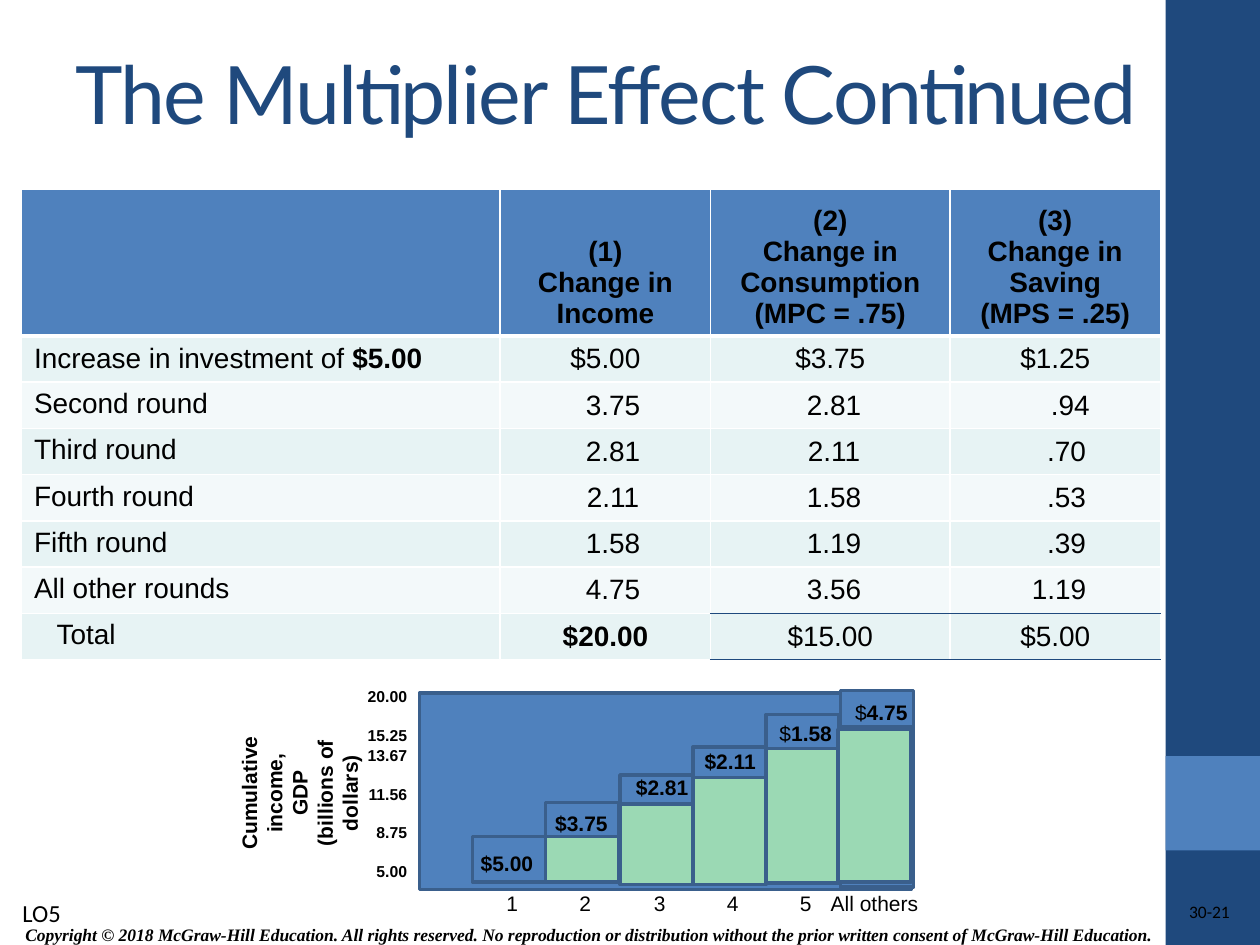
from dataclasses import dataclass
from typing import NamedTuple, Optional

from lxml.etree import SubElement
from pptx import Presentation
from pptx.dml.color import RGBColor
from pptx.enum.shapes import MSO_SHAPE
from pptx.enum.text import MSO_ANCHOR as Anchor, PP_ALIGN as Align
from pptx.oxml.ns import qn
from pptx.util import Pt

EMU_PER_PX = 9144
NAVY, BLUE, GREEN, OUTLINE = "1F497D", "4F81BD", "9BD9B4", "3A5F8C"
WHITE, BLACK = "FFFFFF", "000000"
BANDS = ("E7F3F4", "F3F9FA")
SPACE_PX = 6


class Box(NamedTuple):
    left: int
    top: int
    width: int
    height: int


class Run(NamedTuple):
    text: str
    bold: bool = False


class Row(NamedTuple):
    label: tuple
    values: tuple
    shifts: tuple = (0, 0, 0)
    indent: int = 0


@dataclass
class Style:
    size: float = 12
    font: str = "Arial"
    color: str = BLACK
    italic: bool = False
    align: Align = Align.CENTER
    anchor: Anchor = Anchor.TOP
    wrap: bool = False
    inset: Optional[int] = None
    rotation: int = 0
    tracking: int = 0


def emu(px: int) -> int:
    return px * EMU_PER_PX


def rgb(color: str) -> RGBColor:
    return RGBColor.from_string(color)


def fill_paragraph(paragraph, runs, style: Style) -> None:
    paragraph.alignment = style.align
    for item in runs:
        run = paragraph.add_run()
        run.text = item.text
        run.font.size = Pt(style.size)
        run.font.name = style.font
        run.font.bold = item.bold
        run.font.italic = style.italic
        run.font.color.rgb = rgb(style.color)
        if style.tracking:
            run.font._element.set("spc", str(style.tracking))


def fill_frame(frame, paragraphs, style: Style, gaps=()) -> None:
    for index, runs in enumerate(paragraphs):
        paragraph = frame.paragraphs[0] if index == 0 else frame.add_paragraph()
        if gaps and gaps[index]:
            paragraph.space_before = Pt(gaps[index])
        fill_paragraph(paragraph, runs, style)


def add_text(slide, box: Box, paragraphs, style: Style, gaps=()) -> None:
    shape = slide.shapes.add_textbox(*map(emu, box))
    shape.rotation = style.rotation
    frame = shape.text_frame
    frame.word_wrap = style.wrap
    frame.vertical_anchor = style.anchor
    if style.inset is not None:
        frame.margin_left = frame.margin_right = emu(style.inset)
        frame.margin_top = frame.margin_bottom = emu(style.inset)
    fill_frame(frame, paragraphs, style, gaps)


def add_rectangle(slide, box: Box, fill: str, line: Optional[str] = OUTLINE) -> None:
    shape = slide.shapes.add_shape(MSO_SHAPE.RECTANGLE, *map(emu, box))
    shape.shadow.inherit = False
    shape.fill.solid()
    shape.fill.fore_color.rgb = rgb(fill)
    if line:
        shape.line.color.rgb = rgb(line)
        shape.line.width = Pt(2)
    else:
        shape.line.fill.background()


def set_borders(cell, **special) -> None:
    properties = cell._tc.get_or_add_tcPr()
    for side in "LRTB":
        color, width = special.get(side, (WHITE, 1))
        line = SubElement(properties, qn(f"a:ln{side}"), w=str(Pt(width)))
        SubElement(SubElement(line, qn("a:solidFill")), qn("a:srgbClr"), val=color)


def style_cell(cell, fill: str, anchor: Anchor, **borders) -> None:
    set_borders(cell, **borders)
    cell.fill.solid()
    cell.fill.fore_color.rgb = rgb(fill)
    cell.vertical_anchor = anchor


HEADERS = (
    (),
    ("(1)", "Change in Income"),
    ("(2)", "Change in Consumption (MPC = .75)"),
    ("(3)", "Change in Saving", "(MPS = .25)"),
)
ROWS = (
    Row((Run("Increase in investment of "), Run("$5.00", True)), ("$5.00", "$3.75", "$1.25")),
    Row((Run("Second round"),), ("3.75", "2.81", ".94"), (2, 1, 4)),
    Row((Run("Third round"),), ("2.81", "2.11", ".70"), (2, 1, 3)),
    Row((Run("Fourth round"),), ("2.11", "1.58", ".53"), (2, 1, 3)),
    Row((Run("Fifth round"),), ("1.58", "1.19", ".39"), (2, 1, 3)),
    Row((Run("All other rounds"),), ("4.75", "3.56", "1.19"), (2, 1, 1)),
    Row((Run("Total"),), ("$20.00", "$15.00", "$5.00"), indent=3),
)


def add_rounds_table(slide) -> None:
    box = Box(17, 150, 904, 370)
    header_height = 116
    table = slide.shapes.add_table(len(ROWS) + 1, 4, *map(emu, box)).table
    for column, width in zip(table.columns, (380, 167, 190, 167)):
        column.width = emu(width)
    for index, row in enumerate(table.rows):
        row.height = emu(box.height - header_height) // len(ROWS) if index else emu(header_height)
    centered, left = Style(16), Style(16, align=Align.LEFT)
    thick, rule = (WHITE, 3), (NAVY, 1)
    for column, lines in enumerate(HEADERS):
        cell = table.cell(0, column)
        style_cell(cell, BLUE, Anchor.BOTTOM, B=thick)
        fill_frame(cell.text_frame, [[Run(line, True)] for line in lines], centered)
    last = len(ROWS) - 1
    for index, row in enumerate(ROWS):
        contents = (row.label, *((Run(value, value == "$20.00"),) for value in row.values))
        for column, (runs, shift) in enumerate(zip(contents, (row.indent, *row.shifts))):
            cell = table.cell(index + 1, column)
            borders = {"T": thick} if index == 0 else {}
            if column >= 2 and index >= last - 1:
                borders["B"] = rule
                if index == last:
                    borders["T"] = rule
            anchor = Anchor.MIDDLE if column or index == 0 else Anchor.TOP
            style_cell(cell, BANDS[index % 2], anchor, **borders)
            cell.margin_left = emu(10 + SPACE_PX * shift)
            fill_paragraph(cell.text_frame.paragraphs[0], runs, centered if column else left)


def add_income_steps(slide) -> None:
    add_rectangle(slide, Box(333, 550, 390, 156), BLUE)
    lefts = [round(375 + step * 350 / 6) for step in range(6)]
    blue_spans = ((664, 36), (637, 63), (615, 85), (593, 107), (567, 133), (548, 156))
    green_spans = ((664, 36), (638, 64), (617, 85), (594, 107), (577, 121))
    for fill, starts, spans in ((BLUE, lefts, blue_spans), (GREEN, lefts[1:], green_spans)):
        for start, (top, height) in zip(starts, spans):
            add_rectangle(slide, Box(start, top, 58, height), fill)
    add_rectangle(slide, Box(665, 579, 58, 121), GREEN)

    step_labels = (
        (Box(358, 670, 75, 30), [Run("$5.00", True)], Align.RIGHT),
        (Box(423, 638, 77, 30), [Run("$3.75", True)], Align.CENTER),
        (Box(483, 610, 85, 30), [Run("$2.81", True)], Align.CENTER),
        (Box(542, 589, 75, 30), [Run("$2.11", True)], Align.CENTER),
        (Box(598, 567, 83, 30), [Run("$"), Run("1.58", True)], Align.CENTER),
        (Box(658, 550, 83, 30), [Run("$"), Run("4.75", True)], Align.CENTER),
    )
    for box, runs, align in step_labels:
        add_text(slide, box, [runs], Style(align=align))

    axis_title = ("Cumulative income,", "GDP", "(billions of dollars)")
    add_text(slide, Box(159, 574, 158, 111), [[Run(line, True)] for line in axis_title],
             Style(wrap=True, rotation=270))
    levels = ("20.00", "15.25", "13.67", "11.56", "8.75", "5.00")
    add_text(slide, Box(273, 540, 60, 162), [[Run(level, True)] for level in levels],
             Style(9, align=Align.RIGHT), (0, 11.4, 0.5, 11.4, 11.4, 11.4))
    for start, name in zip(lefts, "12345"):
        add_text(slide, Box(start + 17, 702, 25, 30), [[Run(name)]], Style())
    add_text(slide, Box(648, 701, 92, 31), [[Run("All others")]], Style(anchor=Anchor.MIDDLE))


def main() -> None:
    presentation = Presentation()
    presentation.slide_width, presentation.slide_height = emu(1000), emu(750)
    slide = presentation.slides.add_slide(presentation.slide_layouts[6])
    add_rectangle(slide, Box(925, 0, 75, 750), NAVY, None)
    add_rectangle(slide, Box(925, 600, 75, 75), BLUE, None)
    add_text(slide, Box(6, 728, 922, 28), [[Run(
        "Copyright © 2018 McGraw-Hill Education. All rights reserved. No reproduction or "
        "distribution without the prior written consent of McGraw-Hill Education.", True)]],
        Style(10, "Times New Roman", italic=True, anchor=Anchor.MIDDLE))
    add_text(slide, Box(781, 715, 195, 20), [[Run("30-21")]],
             Style(10, "Calibri", align=Align.RIGHT, wrap=True, inset=0))
    add_text(slide, Box(50, 8, 867, 131), [[Run("The Multiplier Effect Continued")]],
             Style(46, "Lato", NAVY, align=Align.LEFT, anchor=Anchor.MIDDLE, wrap=True, tracking=-100))
    add_rounds_table(slide)
    add_income_steps(slide)
    add_text(slide, Box(8, 708, 53, 34), [[Run("LO5")]], Style(14, "Calibri", align=Align.LEFT))
    presentation.save("out.pptx")


if __name__ == "__main__":
    main()
